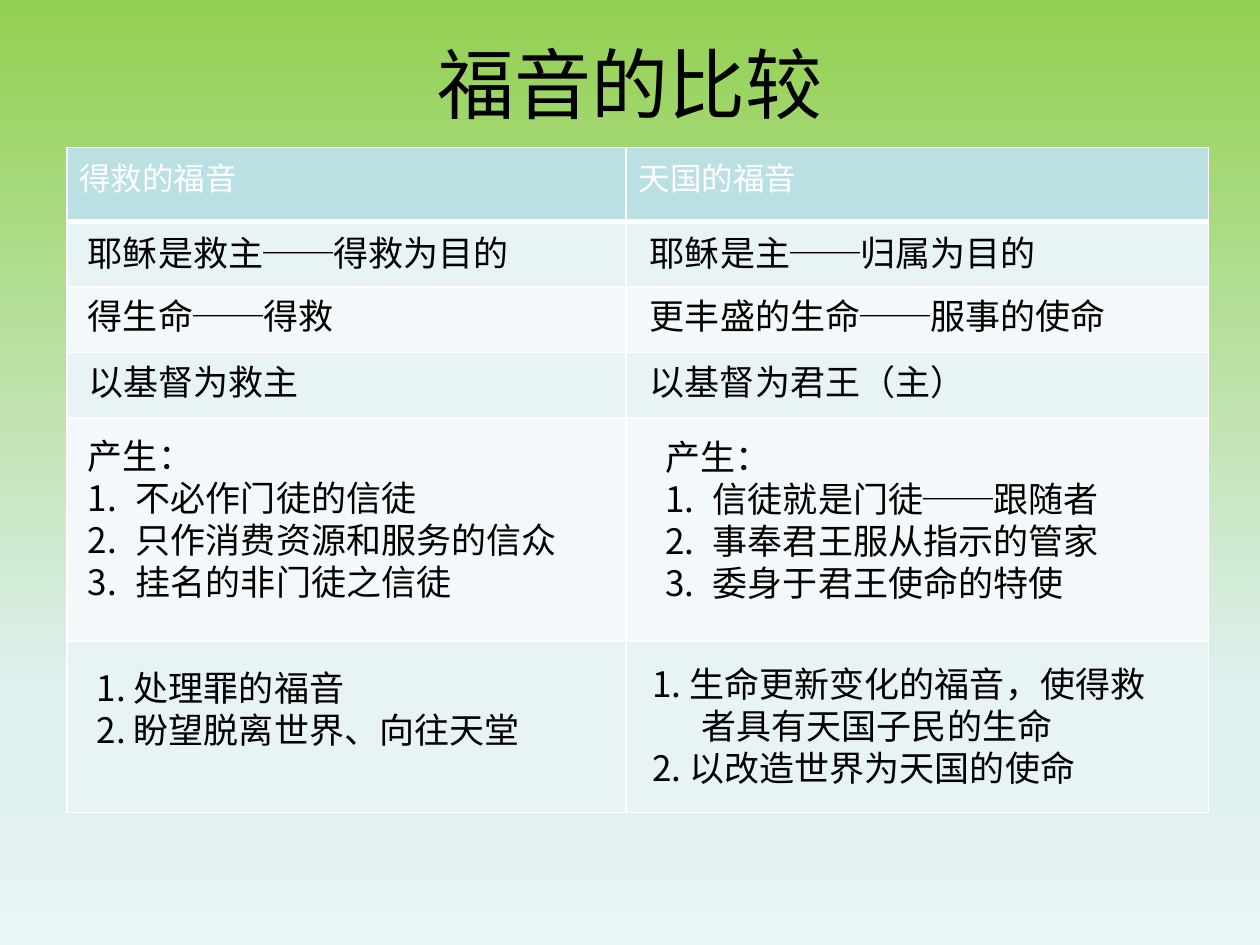
from dataclasses import dataclass

from lxml.etree import SubElement
from pptx import Presentation
from pptx.dml.color import RGBColor
from pptx.enum.text import MSO_ANCHOR, MSO_AUTO_SIZE, PP_ALIGN
from pptx.oxml.ns import qn
from pptx.util import Emu, Inches, Pt


@dataclass(frozen=True)
class Theme:
    latin: str = "Calibri"
    chinese: str = "Noto Sans CJK SC"
    ink: str = "000000"
    rule: str = "FFFFFF"
    header: str = "BBE0E3"
    bands: tuple = ("E7F3F4", "F3F9FA")
    backdrop: tuple = ((0, "92D050"), (74, "E0F1F2"), (83, "E0F1F2"), (100, "EBF6F7"))
    title_size: int = 44
    header_size: int = 28
    row_size: int = 24
    body_size: int = 20


class Board:
    """One slide on a grid of 10 columns by 7.5 rows."""

    COLUMNS, ROWS = 10, 7.5

    def __init__(self, deck, theme):
        self.theme = theme
        self.slide = deck.slides.add_slide(deck.slide_layouts[6])
        self.column = deck.slide_width / self.COLUMNS
        self.row = deck.slide_height / self.ROWS

    def x(self, columns):
        return Emu(round(columns * self.column))

    def y(self, rows):
        return Emu(round(rows * self.row))

    def area(self, left, top, width, height):
        return self.x(left), self.y(top), self.x(width), self.y(height)

    def backdrop(self):
        fill = self.slide.background.fill
        fill.gradient()
        fill.gradient_angle = 270
        stops = next(self.slide.background._cSld.iter(qn("a:gsLst")))
        for stop in list(stops):
            stops.remove(stop)
        for percent, color in self.theme.backdrop:
            stop = SubElement(stops, qn("a:gs"), pos=str(percent * 1000))
            SubElement(stop, qn("a:srgbClr"), val=color)

    def style(self, paragraph, size, face=None, align=PP_ALIGN.LEFT):
        paragraph.alignment = align
        font = paragraph.font
        font.size = Pt(size)
        font.name = face or self.theme.chinese
        font.color.rgb = RGBColor.from_string(self.theme.ink)
        defaults = paragraph._p.pPr.find(qn("a:defRPr"))
        SubElement(defaults, qn("a:ea"), typeface=self.theme.chinese)

    def hang(self, paragraph, columns, numbered=False):
        properties = paragraph._p.get_or_add_pPr()
        indent = self.x(columns)
        properties.set("marL", str(indent))
        properties.set("indent", str(-indent))
        if numbered:
            number = SubElement(properties, qn("a:buAutoNum"), type="arabicPeriod")
            properties.insert(0, number)

    def title(self, text, *area):
        frame = self.slide.shapes.add_textbox(*self.area(*area)).text_frame
        frame.word_wrap = True
        frame.vertical_anchor = MSO_ANCHOR.MIDDLE
        frame.text = text
        self.style(frame.paragraphs[0], self.theme.title_size, self.theme.latin, PP_ALIGN.CENTER)

    def note(self, lines, *area, wrap=True):
        frame = self.slide.shapes.add_textbox(*self.area(*area)).text_frame
        frame.word_wrap = wrap
        frame.auto_size = MSO_AUTO_SIZE.SHAPE_TO_FIT_TEXT
        frame.text = "\n".join(lines)
        for paragraph in frame.paragraphs:
            self.style(paragraph, self.theme.body_size)
        return frame.paragraphs

    def borders(self, cell, bottom):
        properties = cell._tc.get_or_add_tcPr()
        for place, (side, width) in enumerate(
            (("lnL", 1), ("lnR", 1), ("lnT", 1), ("lnB", bottom))
        ):
            line = SubElement(properties, qn(f"a:{side}"), w=str(Pt(width)))
            paint = SubElement(line, qn("a:solidFill"))
            SubElement(paint, qn("a:srgbClr"), val=self.theme.rule)
            properties.insert(place, line)

    def table(self, headings, left, top, widths, heights):
        area = self.area(left, top, sum(widths), sum(heights))
        table = self.slide.shapes.add_table(len(heights), len(widths), *area).table
        for column, width in zip(table.columns, widths):
            column.width = self.x(width)
        for index, (row, height) in enumerate(zip(table.rows, heights)):
            row.height = self.y(height)
            color = self.theme.bands[(index - 1) % 2] if index else self.theme.header
            for cell, heading in zip(row.cells, headings):
                cell.fill.solid()
                cell.fill.fore_color.rgb = RGBColor.from_string(color)
                self.borders(cell, bottom=1 if index else 3)
                paragraph = cell.text_frame.paragraphs[0]
                if index == 0:
                    cell.text = heading
                    self.style(paragraph, self.theme.header_size, align=PP_ALIGN.CENTER)
                else:
                    # The size of an empty cell sets the least row height
                    end = SubElement(paragraph._p, qn("a:endParaRPr"),
                                     sz=str(self.theme.row_size * 100))
                    for script in ("latin", "ea"):
                        SubElement(end, qn(f"a:{script}"), typeface=self.theme.chinese)


STATEMENTS = (
    (1.79, ("耶稣是救主──得救为目的", 3.57), ("耶稣是主──归属为目的", 3.29)),
    (2.29, ("得生命──得救", 2.17), ("更丰盛的生命──服事的使命", 3.85)),
    (2.81, ("以基督为救主", 1.88), ("以基督为君王（主）", 2.73)),
)
OUTCOMES = (
    ((0.6, 3.4, 4.1, 1.45),
     ("不必作门徒的信徒", "只作消费资源和服务的信众", "挂名的非门徒之信徒")),
    ((5.18, 3.41, 3.93, 1.45),
     ("信徒就是门徒──跟随者", "事奉君王服从指示的管家", "委身于君王使命的特使")),
)


def main():
    deck = Presentation()
    deck.slide_width, deck.slide_height = Inches(10), Inches(7.5)
    board = Board(deck, Theme())

    # Backdrop, title and table
    board.backdrop()
    board.title("福音的比较", 0.75, 0, 8.5, 1.32)
    board.table(("得救的福音", "天国的福音"), 0.53, 1.17,
                (4.44, 4.62), (0.59, 0.52, 0.52, 0.52, 1.77, 1.36))

    # One-line statements of both gospels
    for top, *pair in STATEMENTS:
        for left, (statement, width) in zip((0.6, 5.06), pair):
            board.note([statement], left, top, width, 0.44, wrap=False)

    # Numbered outcomes
    for area, outcomes in OUTCOMES:
        _, *items = board.note(("产生：", *outcomes), *area)
        for item in items:
            board.hang(item, 0.38, numbered=True)

    # Closing summaries
    board.note(("1. 处理罪的福音", "2. 盼望脱离世界、向往天堂"), 0.67, 5.24, 4.04, 0.77)
    renewal, _ = board.note(
        ("1. 生命更新变化的福音，使得救者具有天国子民的生命", "2. 以改造世界为天国的使命"),
        5.08, 5.21, 4.12, 1.11)
    board.hang(renewal, 0.39)

    deck.save("out.pptx")


if __name__ == "__main__":
    main()
